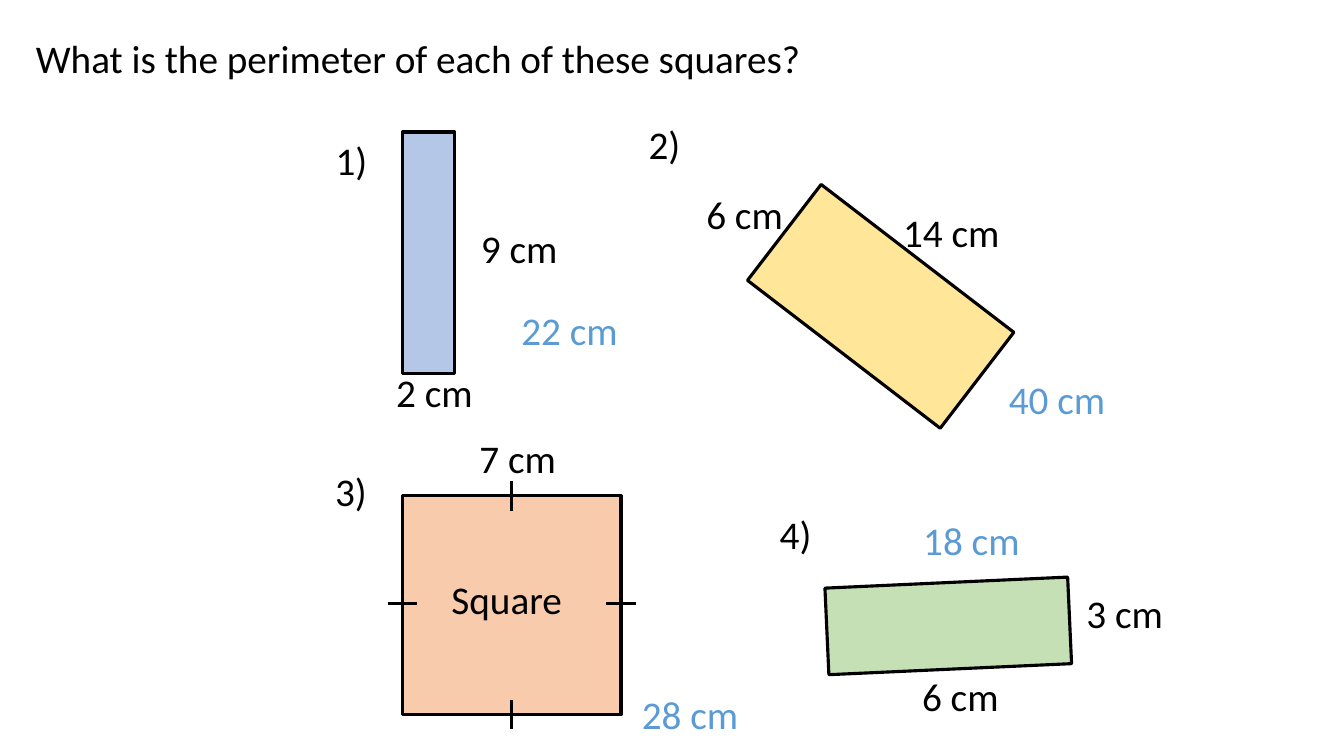
from dataclasses import dataclass

from lxml import etree
from pptx import Presentation
from pptx.dml.color import RGBColor
from pptx.enum.shapes import MSO_CONNECTOR, MSO_SHAPE
from pptx.enum.text import MSO_ANCHOR, MSO_AUTO_SIZE, PP_ALIGN
from pptx.oxml.ns import qn
from pptx.util import Inches, Pt

RECT = MSO_SHAPE.RECTANGLE
STRAIGHT = MSO_CONNECTOR.STRAIGHT
LEFT, CENTER = PP_ALIGN.LEFT, PP_ALIGN.CENTER
TOP = MSO_ANCHOR.TOP
NO_FIT, GROW = MSO_AUTO_SIZE.NONE, MSO_AUTO_SIZE.SHAPE_TO_FIT_TEXT


@dataclass(frozen=True)
class Theme:
    font: str = "Calibri"
    size: float = 28
    line: float = 2.25
    ink: str = "000000"
    answer: str = "5B9BD5"
    blue: str = "B4C7E7"
    yellow: str = "FFE699"
    orange: str = "F8CBAD"
    green: str = "C5E0B4"


THEME = Theme()
TEXT_H = 0.57
TICK = 0.29
# Label width in inches by number of characters
LABEL_W = {2: 0.52, 4: 0.97, 5: 1.17, 6: 1.31}

# Each box is left, top, width, height before turning;
# labels are placed by their centre, measured from the centre of the box.
QUESTIONS = [
    dict(box=(3.99, 1.31, 0.52, 2.4), fill=THEME.blue,
         number=("1)", -0.76, -0.92), answer=("22 cm", 1.4, 0.76),
         labels=[("2 cm", 0.06, 1.38), ("9 cm", 0.9, -0.05)]),
    dict(box=(7.53, 2.44, 2.41, 1.2), fill=THEME.yellow, turn=37.5,
         number=("2)", -2.14, -1.61), answer=("40 cm", 1.75, 0.92),
         labels=[("14 cm", 0.7, -0.74), ("6 cm", -1.35, -0.92)]),
    dict(box=(3.99, 4.92, 2.17, 2.17), fill=THEME.orange, ticks=True,
         number=("3)", -1.59, -1.13), answer=("28 cm", 1.77, 1.08),
         labels=[("7 cm", 0.06, -1.46), ("Square", -0.05, -0.06)]),
    dict(box=(8.2, 5.78, 2.41, 0.86), fill=THEME.green, turn=-2.6,
         number=("4)", -1.51, -0.91), answer=("18 cm", 0.23, -0.85),
         labels=[("6 cm", 0.12, 0.7), ("3 cm", 1.75, -0.13)]),
]


def write(tf, text, color=THEME.ink, align=CENTER, fit=GROW):
    tf.word_wrap = False
    tf.auto_size = fit
    tf.vertical_anchor = TOP
    p = tf.paragraphs[0]
    p.alignment = align
    r = p.add_run()
    r.text = text
    r.font.name = THEME.font
    r.font.size = Pt(THEME.size)
    r.font.color.rgb = RGBColor.from_string(color)


def add_label(slide, cx, cy, text, **fmt):
    w = LABEL_W[len(text)]
    sp = slide.shapes.add_textbox(Inches(cx - w / 2), Inches(cy - TEXT_H / 2),
                                  Inches(w), Inches(TEXT_H))
    write(sp.text_frame, text, **fmt)


def style_line(line):
    line.color.rgb = RGBColor.from_string(THEME.ink)
    line.width = Pt(THEME.line)


def add_tick(slide, cx, cy, dx, dy):
    ln = slide.shapes.add_connector(STRAIGHT, Inches(cx - dx / 2), Inches(cy - dy / 2),
                                    Inches(cx + dx / 2), Inches(cy + dy / 2))
    style_line(ln.line)
    etree.SubElement(ln._element.spPr, qn("a:effectLst"))


def add_title(slide, x, y, w, h, text):
    sp = slide.shapes.title
    sp.left, sp.top, sp.width, sp.height = map(Inches, (x, y, w, h))
    write(sp.text_frame, text, fit=NO_FIT)


def add_question(slide, box, fill, number, labels, answer, turn=0, ticks=False):
    x, y, w, h = box
    cx, cy = x + w / 2, y + h / 2

    # Figure
    sp = slide.shapes.add_shape(RECT, *map(Inches, box))
    sp.rotation = turn
    sp.shadow.inherit = False
    sp.fill.solid()
    sp.fill.fore_color.rgb = RGBColor.from_string(fill)
    style_line(sp.line)

    # Number, side lengths and answer
    text, dx, dy = number
    add_label(slide, cx + dx, cy + dy, text, align=LEFT)
    for text, dx, dy in labels:
        add_label(slide, cx + dx, cy + dy, text)
    text, dx, dy = answer
    add_label(slide, cx + dx, cy + dy, text, color=THEME.answer)

    # Equal-side marks
    if ticks:
        for edge in (y, y + h):
            add_tick(slide, cx, edge, 0, TICK)
        for edge in (x, x + w):
            add_tick(slide, edge, cy - 0.02, TICK, 0)


def main():
    prs = Presentation()
    prs.slide_width, prs.slide_height = Inches(13.33), Inches(7.5)
    slide = prs.slides.add_slide(prs.slide_layouts.get_by_name("Title Only"))
    add_title(slide, 0.21, 0.29, 7.87, TEXT_H,
              "What is the perimeter of each of these squares?")
    for question in QUESTIONS:
        add_question(slide, **question)
    prs.save("out.pptx")


if __name__ == "__main__":
    main()
